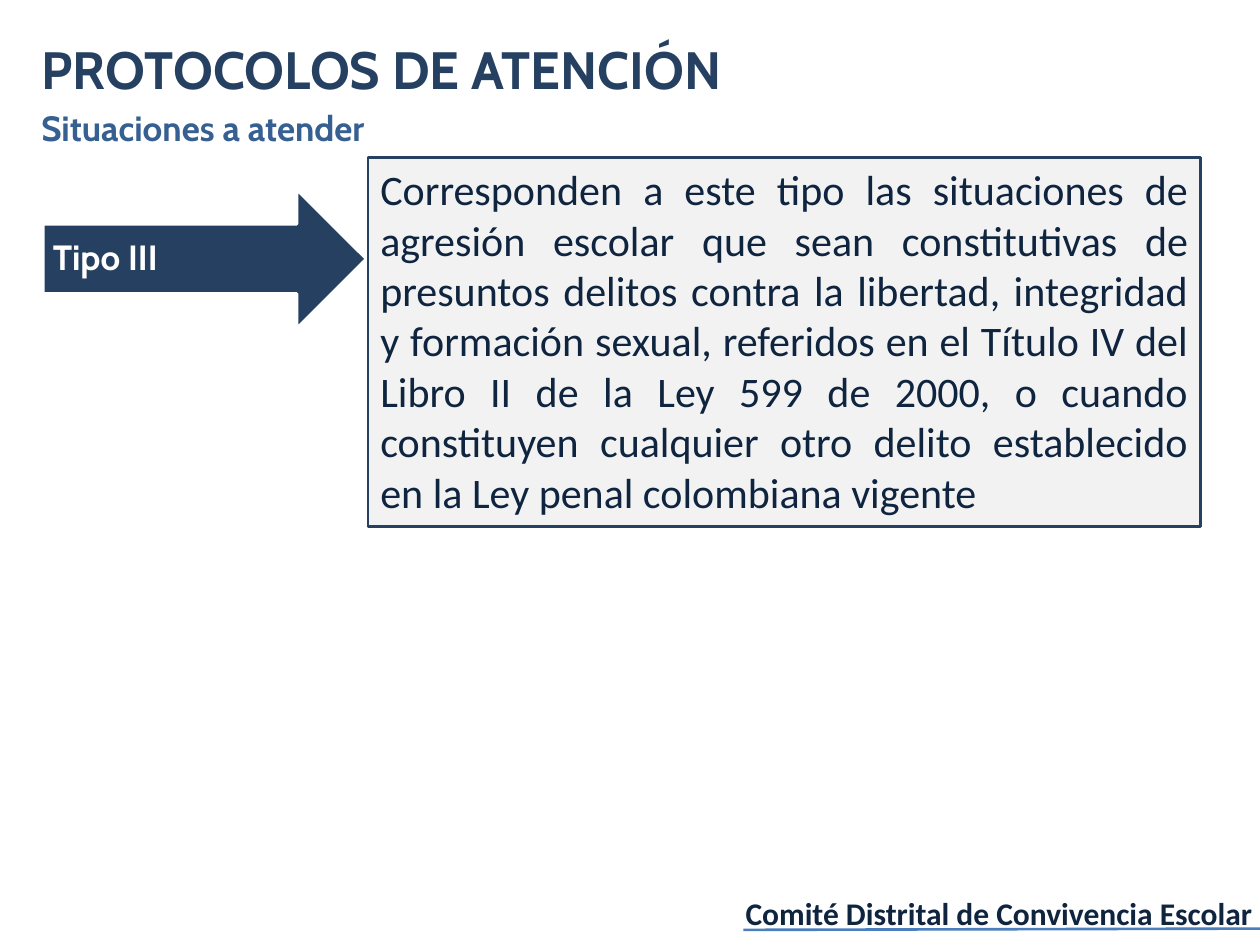
from lxml import etree
from pptx import Presentation
from pptx import util as u
from pptx.dml.color import RGBColor
from pptx.enum import shapes, text
from pptx.oxml.ns import qn

COLORS = {
    "navy": "254061",
    "blue": "376092",
    "ink": "0F243E",
    "rule": "4B7EBC",
    "panel": "F2F2F2",
    "white": "FFFFFF",
}


def rgb(name):
    return RGBColor.from_string(COLORS[name])


def write(shape, words, size, color, font="Cabin", bold=True, wrap=True,
          align=text.PP_ALIGN.LEFT, anchor=text.MSO_ANCHOR.TOP,
          margins=(0.1, 0.05, 0.1, 0.05), spacing=1.0):
    frame = shape.text_frame
    frame.word_wrap = wrap
    frame.auto_size = text.MSO_AUTO_SIZE.NONE
    frame.vertical_anchor = anchor
    (frame.margin_left, frame.margin_top,
     frame.margin_right, frame.margin_bottom) = map(u.Inches, margins)
    paragraph = frame.paragraphs[0]
    paragraph.alignment = align
    paragraph.line_spacing = spacing
    paragraph.space_before = u.Pt(0)
    run = paragraph.add_run()
    run.text = words
    run.font.name = font
    run.font.size = u.Pt(size)
    run.font.bold = bold
    run.font.color.rgb = rgb(color)


deck = Presentation()
deck.slide_width, deck.slide_height = u.Inches(10), u.Inches(7.5)
slide = deck.slides.add_slide(deck.slide_layouts[5])

heading = slide.shapes.title
heading.left, heading.top = u.Inches(0.23), u.Inches(0.24)
heading.width, heading.height = u.Inches(8.76), u.Inches(0.61)
write(heading, "PROTOCOLOS DE ATENCIÓN", 30, "navy")

subtitle = slide.shapes.add_textbox(
    u.Inches(0.23), u.Inches(0.8), u.Inches(6.57), u.Inches(0.44))
write(subtitle, "Situaciones a atender", 20, "blue")

committee = slide.shapes.add_textbox(
    u.Inches(5.79), u.Inches(7.05), u.Inches(4.25), u.Inches(0.4))
write(committee, "Comité Distrital de Convivencia Escolar", 18, "ink",
      font="Calibri", wrap=False, align=text.PP_ALIGN.RIGHT)

footer_rule = slide.shapes.add_connector(
    shapes.MSO_CONNECTOR.STRAIGHT,
    u.Inches(5.9), u.Inches(7.38), u.Inches(10), u.Inches(7.37))
footer_rule.line.color.rgb = rgb("rule")
footer_rule.line.width = u.Pt(1.5)
etree.SubElement(footer_rule._element.spPr, qn("a:effectLst"))

situation = slide.shapes.add_shape(
    shapes.MSO_SHAPE.RIGHT_ARROW,
    u.Inches(0.34), u.Inches(1.5), u.Inches(2.57), u.Inches(1.11))
definition = slide.shapes.add_shape(
    shapes.MSO_SHAPE.RECTANGLE,
    u.Inches(2.92), u.Inches(1.25), u.Inches(6.61), u.Inches(2.93))
for part, fill, outline, weight in (
        (situation, "navy", "white", 2), (definition, "panel", "navy", 1.5)):
    part.shadow.inherit = False
    part.fill.solid()
    part.fill.fore_color.rgb = rgb(fill)
    part.line.color.rgb = rgb(outline)
    part.line.width = u.Pt(weight)

write(situation, "Tipo III", 20, "white", anchor=text.MSO_ANCHOR.MIDDLE,
      margins=(0.08, 0.08, 0.28, 0.08), spacing=0.9)
write(definition,
      "Corresponden a este tipo las situaciones de agresión escolar que sean "
      "constitutivas de presuntos delitos contra la libertad, integridad y "
      "formación sexual, referidos en el Título IV del Libro II de la Ley 599 "
      "de 2000, o cuando constituyen cualquier otro delito establecido en la "
      "Ley penal colombiana vigente",
      24, "ink", font="Calibri", bold=False, align=text.PP_ALIGN.JUSTIFY)

deck.save("out.pptx")
